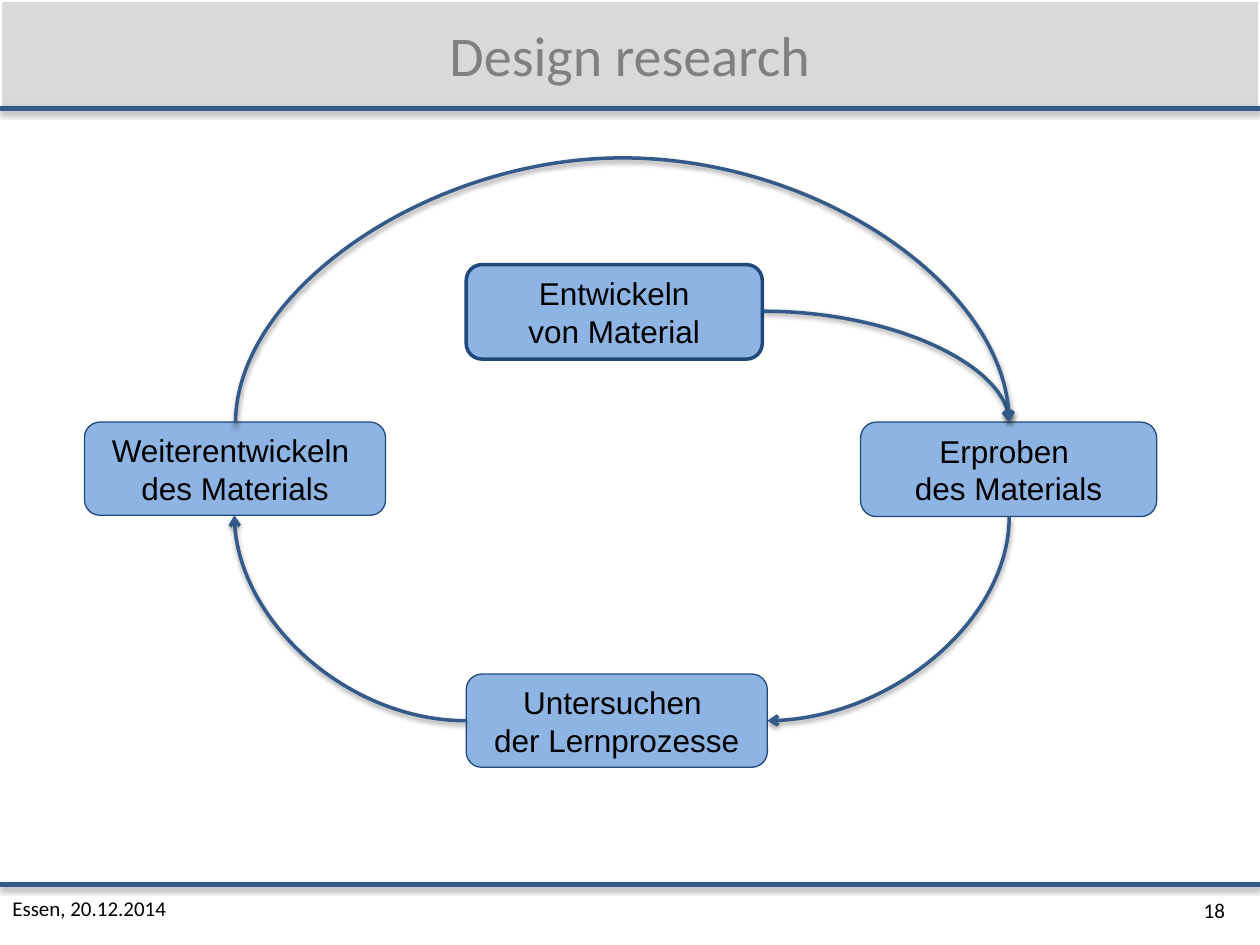
from lxml import etree
from pptx import Presentation
from pptx import util as u
from pptx.dml.color import RGBColor
from pptx.enum import shapes, text
from pptx.oxml.ns import qn

COLUMNS, ROWS = 10, 7.5
CELL = u.Inches(1)
COLORS = {
    "band": "D9D9D9",
    "edge": "FFFFFF",
    "title": "808080",
    "rule": "345A8A",
    "box": "8EB4E3",
    "outline": "1F497D",
    "ink": "000000",
}
HEADER_ROW, FOOTER_ROW = 0.86, 7.02
BOX_HEIGHT = 0.74


def grid(*cells):
    return [round(cell * CELL) for cell in cells]


def color(name):
    return RGBColor.from_string(COLORS[name])


def set_line(line, name, width):
    line.color.rgb = color(name)
    line.width = u.Pt(width)


def write(shape, lines, font, size, name, align):
    frame = shape.text_frame
    frame.text = "\n".join(lines)
    frame.vertical_anchor = text.MSO_ANCHOR.MIDDLE
    for para in frame.paragraphs:
        para.alignment = align
        para.font.name = font
        para.font.size = u.Pt(size)
        para.font.color.rgb = color(name)


def add_label(page, place, words, size, name, align):
    label = page.shapes.add_textbox(*grid(*place))
    label.text_frame.word_wrap = True
    write(label, [words], "Calibri", size, name, align)


def add_block(page, kind, place, fill, outline, width):
    block = page.shapes.add_shape(kind, *grid(*place))
    block.shadow.inherit = False
    block.fill.solid()
    block.fill.fore_color.rgb = color(fill)
    set_line(block.line, outline, width)
    return block


def add_step(page, place, lines, width=0.75):
    box = add_block(page, shapes.MSO_SHAPE.ROUNDED_RECTANGLE, place, "box", "outline", width)
    write(box, lines, "Arial", 18, "ink", text.PP_ALIGN.CENTER)
    box.text_frame.word_wrap = False


def add_shadow(connector):
    effects = etree.SubElement(connector.element.spPr, qn("a:effectLst"))
    shadow = etree.SubElement(
        effects, qn("a:outerShdw"),
        blurRad="40000", dist="20000", dir="5400000", rotWithShape="0")
    tint = etree.SubElement(shadow, qn("a:srgbClr"), val=COLORS["ink"])
    etree.SubElement(tint, qn("a:alpha"), val="38000")


def add_rule(page, row):
    rule = page.shapes.add_connector(
        shapes.MSO_CONNECTOR.STRAIGHT, *grid(0, row, COLUMNS, row))
    set_line(rule.line, "rule", 3)
    add_shadow(rule)


def add_arc(page, start, end, turn=0, bulge=None):
    width, height = abs(end[0] - start[0]), abs(end[1] - start[1])
    if turn % 180:
        width, height = height, width
    left = (start[0] + end[0] - width) / 2
    top = (start[1] + end[1] - height) / 2
    arc = page.shapes.add_connector(
        shapes.MSO_CONNECTOR.CURVE, *grid(left, top, left + width, top + height))
    set_line(arc.line, "rule", 2)
    properties = arc.element.spPr
    etree.SubElement(properties.find(qn("a:ln")), qn("a:tailEnd"), type="arrow")
    add_shadow(arc)
    frame = properties.find(qn("a:xfrm"))
    frame.set("rot", str(turn * 60000))
    geometry = properties.find(qn("a:prstGeom"))
    if bulge is None:
        geometry.set("prst", "curvedConnector2")
    else:
        frame.set("flipH", "1")
        frame.set("flipV", "1")
        guides = geometry.find(qn("a:avLst"))
        share = round(bulge / width * 100000)
        etree.SubElement(guides, qn("a:gd"), name="adj1", fmla=f"val {share}")


def main():
    deck = Presentation()
    deck.slide_width, deck.slide_height = grid(COLUMNS, ROWS)
    page = deck.slides.add_slide(deck.slide_layouts[6])

    add_rule(page, FOOTER_ROW)
    add_block(page, shapes.MSO_SHAPE.RECTANGLE, (0, 0, COLUMNS, 0.87), "band", "edge", 2)
    add_rule(page, HEADER_ROW)
    add_label(page, (0, 0, COLUMNS, HEADER_ROW), "Design research", 32, "title",
              text.PP_ALIGN.CENTER)

    add_step(page, (3.7, 5.35, 2.39, BOX_HEIGHT), ["Untersuchen ", "der Lernprozesse"])
    add_step(page, (6.83, 3.35, 2.35, 0.75), ["Erproben ", "des Materials"])
    add_step(page, (3.7, 2.1, 2.35, 0.75), ["Entwickeln", "von Material"], 2)
    add_step(page, (0.67, 3.35, 2.39, BOX_HEIGHT), ["Weiterentwickeln ", "des Materials"])

    add_arc(page, (6.06, 2.47), (8.01, 3.35))
    add_arc(page, (8.01, 4.1), (6.09, 5.72), 90)
    add_arc(page, (3.7, 5.72), (1.86, 4.09), 180)
    add_arc(page, (1.87, 3.36), (8.01, 3.35), 90, 2.14)

    add_label(page, (0, 7.01, COLUMNS, 0.4), "Essen, 20.12.2014", 12, "ink",
              text.PP_ALIGN.LEFT)
    add_label(page, (9.22, FOOTER_ROW, 0.6, 0.4), "18", 12, "ink", text.PP_ALIGN.RIGHT)
    deck.save("out.pptx")


if __name__ == "__main__":
    main()
